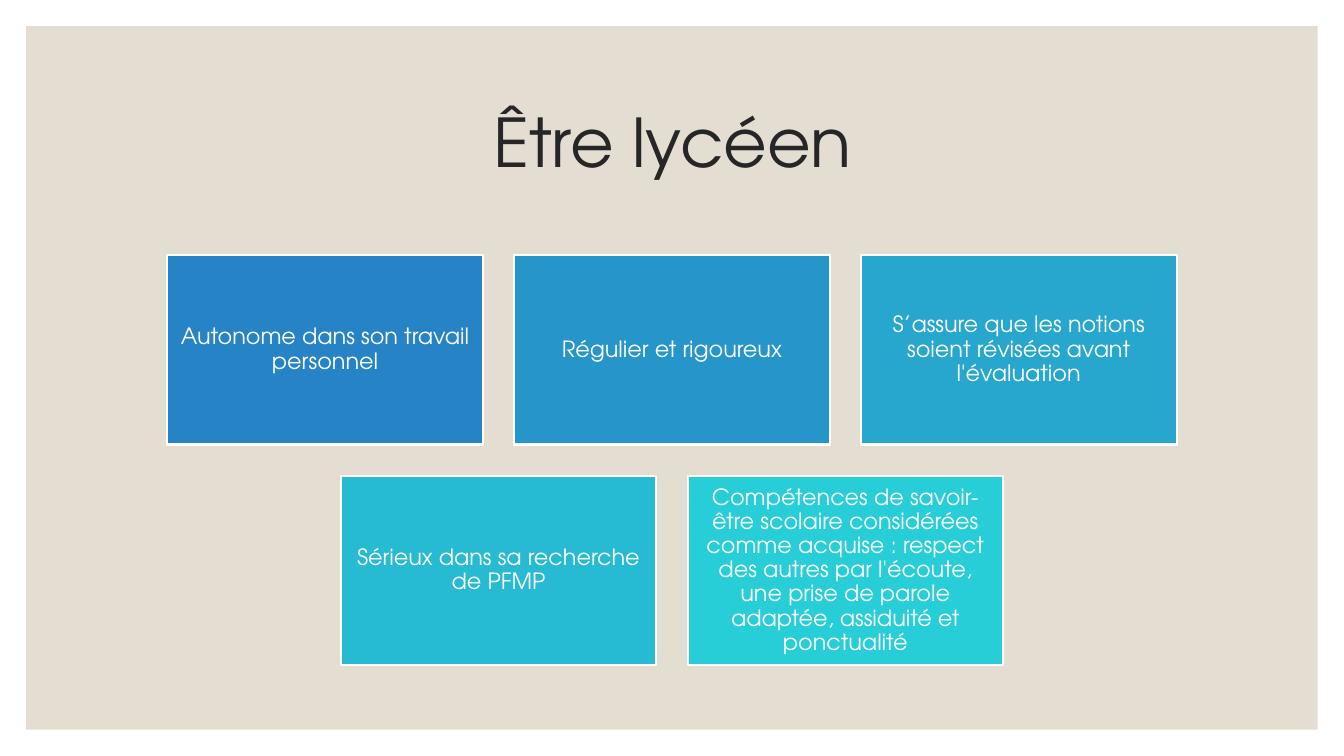
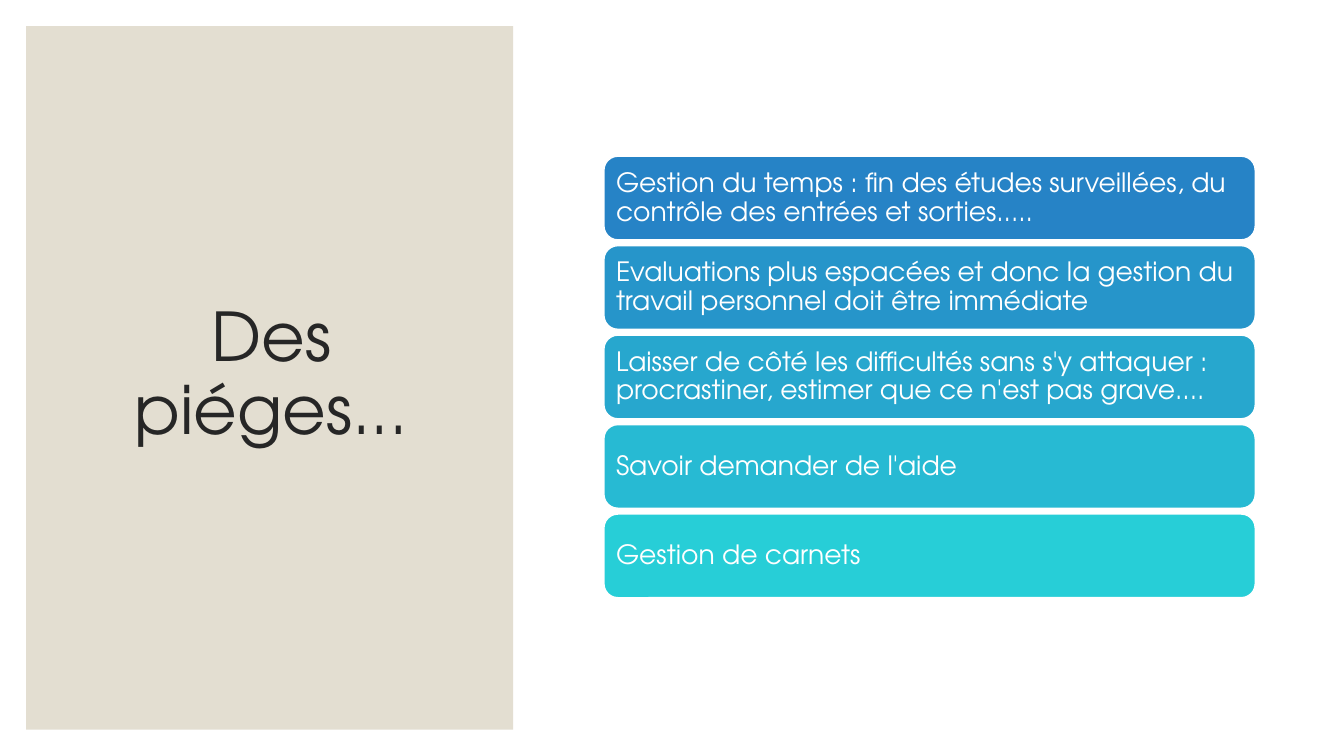
from dataclasses import dataclass

import pptx
import pptx.util
import pptx.dml.color
import pptx.enum.shapes
import pptx.enum.text

Inches = pptx.util.Inches
Pt = pptx.util.Pt
MSO_SHAPE = pptx.enum.shapes.MSO_SHAPE
PP_ALIGN = pptx.enum.text.PP_ALIGN
MSO_ANCHOR = pptx.enum.text.MSO_ANCHOR


@dataclass(frozen=True)
class Theme:
    font: str = "TeX Gyre Adventor"
    band: str = "E3DED1"
    ink: str = "262626"
    white: str = "FFFFFF"
    scale: tuple = ("2683C6", "2695CA", "27A7CE", "27BAD3", "27CED7")
    title_size: float = 48
    card_size: float = 16
    bar_size: float = 19


theme = Theme()
rgb = pptx.dml.color.RGBColor.from_string
slide_w, slide_h, margin = 13.33, 7.5, 0.26


def set_text(shape, text, size, color, align):
    tf = shape.text_frame
    tf.text = text
    tf.word_wrap = True
    tf.auto_size = pptx.enum.text.MSO_AUTO_SIZE.NONE
    tf.vertical_anchor = MSO_ANCHOR.MIDDLE
    p = tf.paragraphs[0]
    p.alignment = align
    p.line_spacing = 0.9
    p.font.name = theme.font
    p.font.size = Pt(size)
    p.font.color.rgb = rgb(color)
    return tf


def add_box(s, kind, box, fill, line_width=0):
    sp = s.shapes.add_shape(kind, *map(Inches, box))
    sp.shadow.inherit = False
    sp.fill.solid()
    sp.fill.fore_color.rgb = rgb(fill)
    if line_width:
        sp.line.color.rgb = rgb(theme.white)
        sp.line.width = Pt(line_width)
    else:
        sp.line.fill.background()
    return sp


prs = pptx.Presentation()
prs.slide_width = Inches(slide_w)
prs.slide_height = Inches(slide_h)

pages = [
    ("Être lycéen", slide_w - 2 * margin, (1.17, 0.7, 11, 1.5)),
    ("Des piéges...", 4.83, (0.63, 0.61, 4.12, 6.24)),
]
slides = []
for title_text, band_w, title_box in pages:
    s = prs.slides.add_slide(prs.slide_layouts[5])
    title = s.shapes.title
    title.left, title.top, title.width, title.height = map(Inches, title_box)
    set_text(title, title_text, theme.title_size, theme.ink, PP_ALIGN.CENTER)
    band = add_box(s, MSO_SHAPE.RECTANGLE,
                   (margin, margin, band_w, slide_h - 2 * margin), theme.band)
    title._element.addprevious(band._element)
    slides.append(s)
cards_slide, bars_slide = slides

card_rows = [
    ["Autonome dans son travail personnel",
     "Régulier et rigoureux",
     "S’assure que les notions soient révisées avant l'évaluation"],
    ["Sérieux dans sa recherche de PFMP",
     "Compétences de savoir-être scolaire considérées comme acquise : "
     "respect des autres par l'écoute, une prise de parole adaptée, "
     "assiduité et ponctualité"],
]
card_w, card_h, card_gap, cards_top = 3.13, 1.88, 0.31, 2.53
colors = iter(theme.scale)
for row, texts in enumerate(card_rows):
    row_w = len(texts) * (card_w + card_gap) - card_gap
    left = (slide_w - row_w) / 2
    top = cards_top + row * (card_h + card_gap)
    for col, text in enumerate(texts):
        box = (left + col * (card_w + card_gap), top, card_w, card_h)
        sp = add_box(cards_slide, MSO_SHAPE.RECTANGLE, box, next(colors), 1.5)
        tf = set_text(sp, text, theme.card_size, theme.white, PP_ALIGN.CENTER)
        tf.margin_left = tf.margin_right = Inches(0.07)
        tf.margin_top = tf.margin_bottom = Inches(0.07)

bar_texts = [
    "Gestion du temps : fin des études surveillées, du contrôle des entrées et sorties.....",
    "Evaluations plus espacées et donc la gestion du travail personnel doit être immédiate",
    "Laisser de côté les difficultés sans s'y attaquer : procrastiner, "
    "estimer que ce n'est pas grave....",
    "Savoir demander de l'aide",
    "Gestion de carnets",
]
bars_left, bars_top, bar_w, bar_h, bars_h = 5.99, 1.55, 6.46, 0.83, 4.38
bar_step = (bars_h - bar_h) / (len(bar_texts) - 1)
for i, (text, color) in enumerate(zip(bar_texts, theme.scale)):
    box = (bars_left, bars_top + i * bar_step, bar_w, bar_h)
    sp = add_box(bars_slide, MSO_SHAPE.ROUNDED_RECTANGLE, box, color, 1)
    tf = set_text(sp, text, theme.bar_size, theme.white, PP_ALIGN.LEFT)
    tf.margin_left = tf.margin_right = Inches(0.08)
    tf.margin_top = tf.margin_bottom = Inches(0.08)

prs.save("out.pptx")
